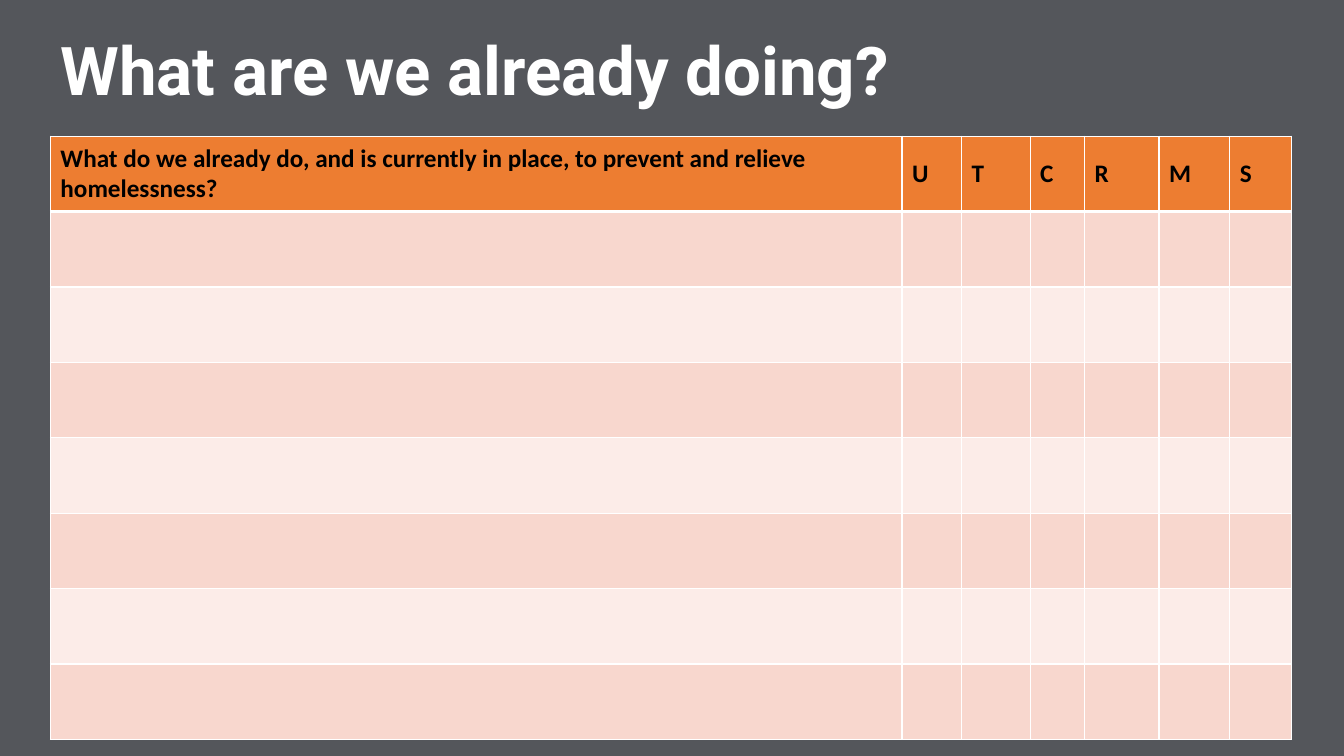
from dataclasses import dataclass

from lxml import etree
from pptx import Presentation
from pptx.dml.color import RGBColor
from pptx.enum.text import MSO_ANCHOR, MSO_AUTO_SIZE, PP_ALIGN
from pptx.oxml.ns import qn
from pptx.util import Cm, Pt

MIDDLE, BOTTOM = MSO_ANCHOR.MIDDLE, MSO_ANCHOR.BOTTOM
LEFT = PP_ALIGN.LEFT
NO_AUTOFIT = MSO_AUTO_SIZE.NONE
TITLE_ONLY = 5


@dataclass(frozen=True)
class Theme:
    background: str = "54565B"
    title: str = "FFFFFF"
    header_text: str = "000000"
    header_fill: str = "ED7D31"
    bands: tuple = ("F8D7CE", "FCECE8")
    rule: str = "FFFFFF"
    title_font: str = "Roboto"
    table_font: str = "Calibri"
    title_size: int = 48
    table_size: int = 18
    thin: int = 1
    thick: int = 3


THEME = Theme()
QUESTION = "What do we already do, and is currently in place, to prevent and relieve homelessness?"
HEADINGS = (QUESTION, *"UTCRMS")
COLUMN_WIDTHS = (21.46, 1.5, 1.73, 1.37, 1.88, 1.78, 1.55)
ROW_COUNT = 8


def write(frame, text, *, font, size, color, bold=True, spacing=None):
    paragraph = frame.paragraphs[0]
    paragraph.alignment = LEFT
    paragraph.line_spacing = spacing
    run = paragraph.add_run()
    run.text = text
    run.font.name = font
    run.font.size = Pt(size)
    run.font.bold = bold
    run.font.color.rgb = RGBColor.from_string(color)


def rule_cell(cell, **widths):
    """Draw the cell's borders; widths maps each side to points."""
    properties = cell._tc.get_or_add_tcPr()
    for side, width in widths.items():
        line = etree.SubElement(properties, qn(f"a:ln{side}"), w=str(int(Pt(width))))
        fill = etree.SubElement(line, qn("a:solidFill"))
        etree.SubElement(fill, qn("a:srgbClr"), val=THEME.rule)


def add_title(slide, text, left, top, width, height):
    title = slide.shapes.title
    title.left, title.top, title.width, title.height = map(Cm, (left, top, width, height))
    frame = title.text_frame
    frame.word_wrap = True
    frame.auto_size = NO_AUTOFIT
    frame.vertical_anchor = BOTTOM
    write(frame, text, font=THEME.title_font, size=THEME.title_size,
          color=THEME.title, spacing=0.9)


def add_activity_table(slide, left, top, width, height):
    table = slide.shapes.add_table(ROW_COUNT, len(HEADINGS), Cm(left), Cm(top),
                                   Cm(width), Cm(height)).table
    for column, column_width in zip(table.columns, COLUMN_WIDTHS):
        column.width = Cm(column_width)

    # Borders and banded fills
    for row_index, row in enumerate(table.rows):
        row.height = Cm(height / ROW_COUNT)
        fill = THEME.bands[(row_index - 1) % 2] if row_index else THEME.header_fill
        above = THEME.thick if row_index == 1 else THEME.thin
        below = THEME.thick if row_index == 0 else THEME.thin
        for cell in row.cells:
            rule_cell(cell, L=THEME.thin, R=THEME.thin, T=above, B=below)
            cell.fill.solid()
            cell.fill.fore_color.rgb = RGBColor.from_string(fill)

    # Header row
    for cell, heading in zip(table.rows[0].cells, HEADINGS):
        cell.vertical_anchor = MIDDLE
        write(cell.text_frame, heading, font=THEME.table_font,
              size=THEME.table_size, color=THEME.header_text)


def main():
    presentation = Presentation()
    presentation.slide_width, presentation.slide_height = Cm(33.87), Cm(19.05)
    slide = presentation.slides.add_slide(presentation.slide_layouts[TITLE_ONLY])
    background = slide.background.fill
    background.solid()
    background.fore_color.rgb = RGBColor.from_string(THEME.background)

    add_title(slide, "What are we already doing?", 1.27, 0.76, 24.64, 2.13)
    add_activity_table(slide, 1.27, 3.43, sum(COLUMN_WIDTHS), 15.2)
    presentation.save("out.pptx")


if __name__ == "__main__":
    main()
